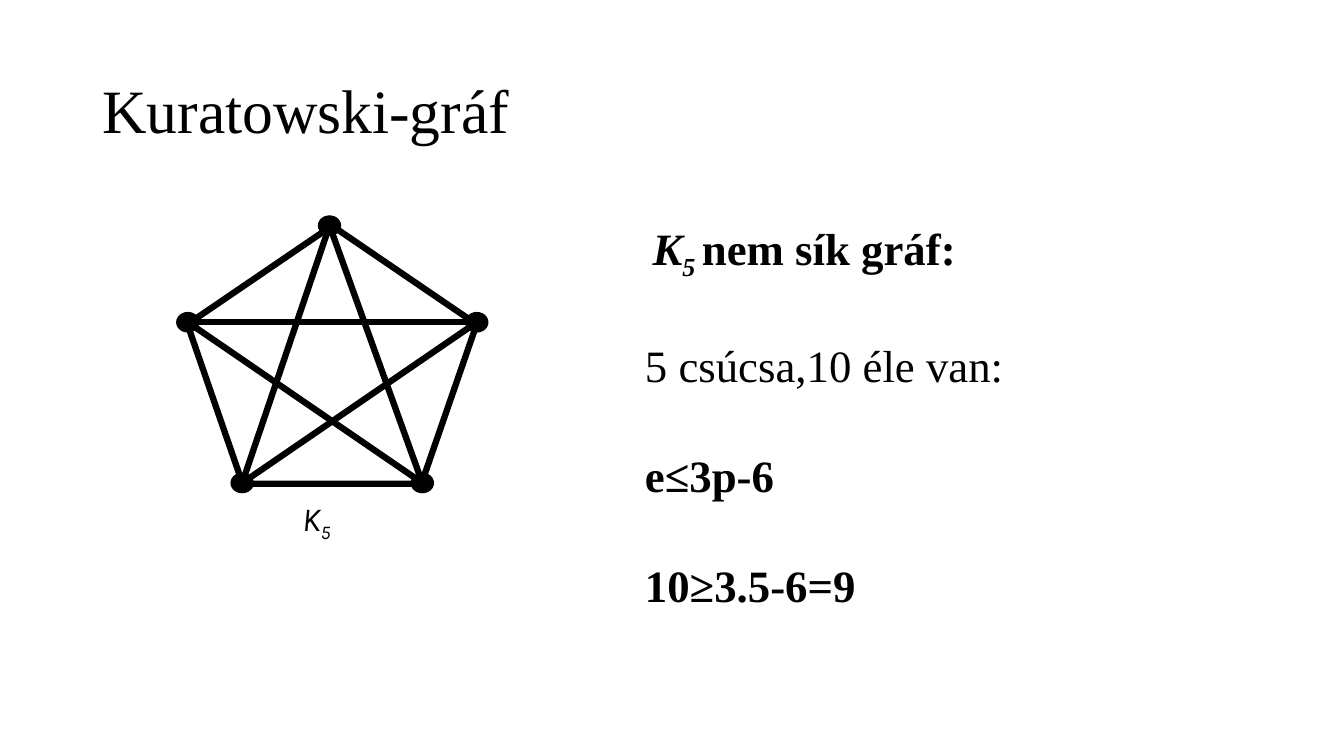
from dataclasses import dataclass
from itertools import combinations

from lxml import etree
from pptx import Presentation
from pptx.dml.color import RGBColor
from pptx.enum.shapes import MSO_CONNECTOR, MSO_SHAPE
from pptx.enum.text import MSO_ANCHOR
from pptx.oxml.ns import qn
from pptx.util import Pt

STRAIGHT = MSO_CONNECTOR.STRAIGHT
PENTAGON = MSO_SHAPE.REGULAR_PENTAGON
OVAL = MSO_SHAPE.OVAL
TOP = MSO_ANCHOR.TOP
MIDDLE = MSO_ANCHOR.MIDDLE

BLACK = "000000"
SERIF = "Times New Roman"
SANS = "Karla"
EDGE_WIDTH = 4.5
DOT_WIDTH, DOT_HEIGHT = 16, 14


@dataclass
class Vertex:
    x: float
    y: float


@dataclass
class Piece:
    text: str
    size: float = 32
    font: str = SERIF
    bold: bool = False
    italic: bool = False
    subscript: bool = False


@dataclass
class TextBlock:
    left: float
    top: float
    width: float
    height: float
    paragraphs: list[list[Piece]]
    anchor: MSO_ANCHOR = TOP
    line_spacing: float = 1.0
    gap: float = 0


# Vertices clockwise from the top
VERTICES = [
    Vertex(235.4, 161.2),
    Vertex(340.6, 230.2),
    Vertex(301.7, 345),
    Vertex(173, 345),
    Vertex(134.2, 230.2),
]

TEXT_BLOCKS = [
    TextBlock(66, 28.75, 828, 104.4, [[Piece("Kuratowski-gráf", 44)]],
              anchor=MIDDLE, line_spacing=0.9),
    TextBlock(208.8, 352, 60, 36, [[
        Piece("K", 24, SANS, italic=True),
        Piece("5", 24, SANS, italic=True, subscript=True),
    ]]),
    TextBlock(453.6, 154, 449.3, 356.4, [
        [
            Piece(" ", 24, SANS, bold=True, italic=True),
            Piece("K", bold=True, italic=True),
            Piece("5 ", bold=True, italic=True, subscript=True),
            Piece("nem sík gráf:", bold=True),
        ],
        [Piece("5 csúcsa,10 éle van:")],
        [Piece("e≤3p-6", bold=True)],
        [Piece("10≥3.5-6=9", bold=True)],
    ], gap=40),
]


def color(value: str) -> RGBColor:
    return RGBColor.from_string(value)


def add_text_block(slide, block: TextBlock) -> None:
    box = slide.shapes.add_textbox(
        Pt(block.left), Pt(block.top), Pt(block.width), Pt(block.height))
    frame = box.text_frame
    frame.word_wrap = True
    frame.vertical_anchor = block.anchor
    for index, pieces in enumerate(block.paragraphs):
        paragraph = frame.add_paragraph() if index else frame.paragraphs[0]
        paragraph.line_spacing = block.line_spacing
        paragraph.space_before = Pt(block.gap if index else 0)
        for piece in pieces:
            run = paragraph.add_run()
            run.text = piece.text
            run.font.size = Pt(piece.size)
            run.font.name = piece.font
            run.font.bold = piece.bold
            run.font.italic = piece.italic
            run.font.color.rgb = color(BLACK)
            if piece.subscript:
                run.font._element.set("baseline", "-25000")


def add_edge(slide, start: Vertex, end: Vertex) -> None:
    edge = slide.shapes.add_connector(
        STRAIGHT, Pt(start.x), Pt(start.y), Pt(end.x), Pt(end.y))
    edge.line.color.rgb = color(BLACK)
    edge.line.width = Pt(EDGE_WIDTH)
    etree.SubElement(edge._element.spPr, qn("a:effectLst"))


def add_outer_cycle(slide) -> None:
    pentagon = slide.shapes.add_shape(
        PENTAGON, Pt(133.9), Pt(161.3), Pt(206.6), Pt(184.3))
    pentagon.shadow.inherit = False
    pentagon.fill.background()
    pentagon.line.color.rgb = color(BLACK)
    pentagon.line.width = Pt(EDGE_WIDTH)


def add_dot(slide, vertex: Vertex) -> None:
    dot = slide.shapes.add_shape(
        OVAL, Pt(vertex.x - DOT_WIDTH / 2), Pt(vertex.y - DOT_HEIGHT / 2),
        Pt(DOT_WIDTH), Pt(DOT_HEIGHT))
    dot.shadow.inherit = False
    dot.fill.solid()
    dot.fill.fore_color.rgb = color(BLACK)
    dot.line.color.rgb = color(BLACK)
    dot.line.width = Pt(0.75)


def main() -> None:
    presentation = Presentation()
    presentation.slide_width = Pt(960)
    presentation.slide_height = Pt(540)
    slide = presentation.slides.add_slide(presentation.slide_layouts[6])

    # Complete graph: outer cycle, diagonals, vertices
    add_outer_cycle(slide)
    for first, second in combinations(range(len(VERTICES)), 2):
        if second - first in (2, 3):
            add_edge(slide, VERTICES[first], VERTICES[second])
    for vertex in VERTICES:
        add_dot(slide, vertex)

    # Title, graph label and argument
    for block in TEXT_BLOCKS:
        add_text_block(slide, block)

    presentation.save("out.pptx")


if __name__ == "__main__":
    main()
